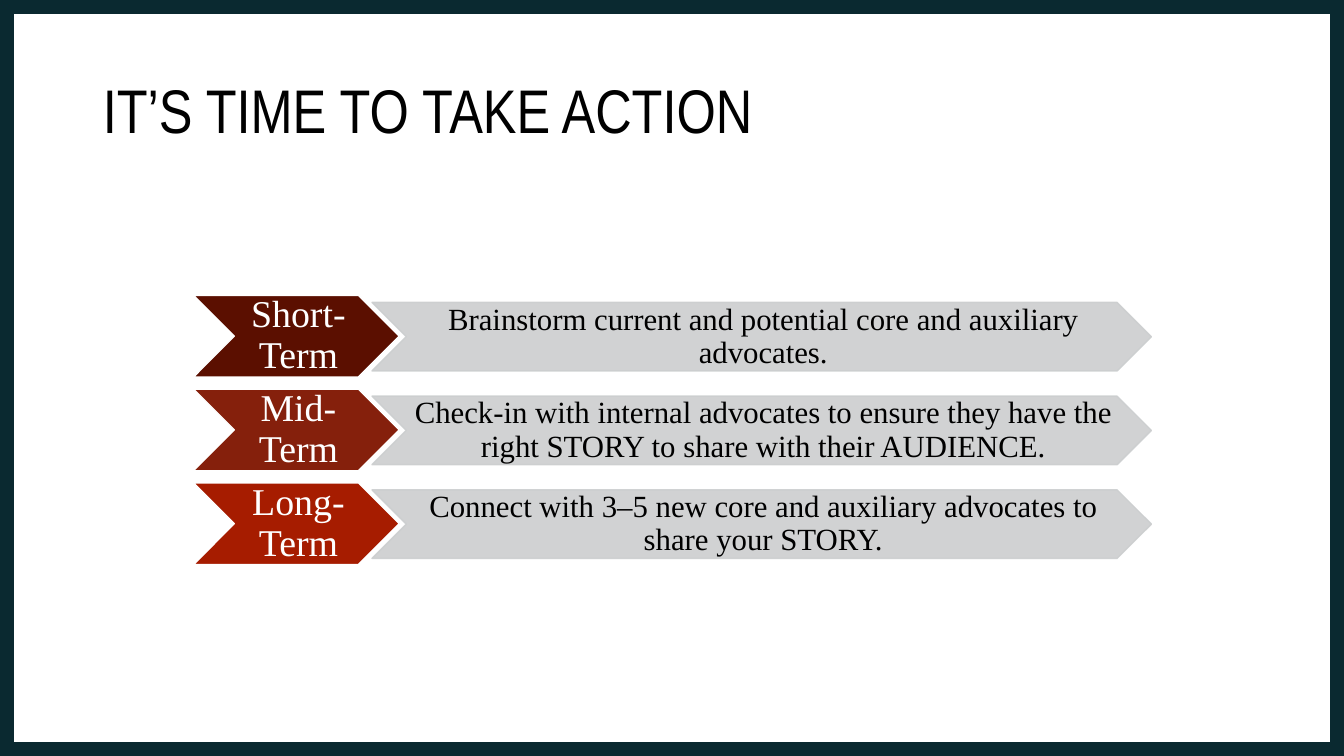
from lxml import etree
from pptx import Presentation
from pptx.dml.color import RGBColor
from pptx.enum.shapes import MSO_SHAPE
from pptx.enum.text import MSO_ANCHOR, MSO_AUTO_SIZE, PP_ALIGN
from pptx.oxml.ns import qn
from pptx.util import Inches, Pt

RECT, CHEVRON = MSO_SHAPE.RECTANGLE, MSO_SHAPE.CHEVRON
MIDDLE, NO_FIT = MSO_ANCHOR.MIDDLE, MSO_AUTO_SIZE.NONE
LEFT, CENTER = PP_ALIGN.LEFT, PP_ALIGN.CENTER

COLORS = {
    "frame": "0A2930",
    "white": "FFFFFF",
    "black": "000000",
    "grey": "CCCECF",
    "short": "5B0F00",
    "mid": "85200C",
    "long": "A61C00",
}
STEPS = [
    ("short", "Short-Term",
     "Brainstorm current and potential core and auxiliary advocates."),
    ("mid", "Mid-Term",
     "Check-in with internal advocates to ensure they have the right STORY "
     "to share with their AUDIENCE."),
    ("long", "Long-Term",
     "Connect with 3–5 new core and auxiliary advocates to share your STORY."),
]
TOP, PITCH = 2.93, 0.93


def rgb(name):
    return RGBColor.from_string(COLORS[name])


def write(sp, text, size, font="Times New Roman", color="black",
          align=CENTER, insets=None):
    tf = sp.text_frame
    tf.word_wrap = True
    tf.auto_size = NO_FIT
    tf.vertical_anchor = MIDDLE
    if insets:
        (tf.margin_left, tf.margin_top,
         tf.margin_right, tf.margin_bottom) = [Inches(v) for v in insets]
    p = tf.paragraphs[0]
    p.alignment = align
    p.line_spacing = 0.9
    r = p.add_run()
    r.text = text
    r.font.size = Pt(size)
    r.font.name = font
    r.font.color.rgb = rgb(color)


class Deck:
    """Holds the presentation, its style and the current slide."""

    def __init__(self):
        self.prs = Presentation()
        self.prs.slide_width = Inches(13.33)
        self.prs.slide_height = Inches(7.5)
        self.s = self.prs.slides.add_slide(self.prs.slide_layouts[5])
        self.s.background.fill.solid()
        self.s.background.fill.fore_color.rgb = rgb("white")

    def shape(self, kind, box, line, width, fill=None, alpha=None):
        sp = self.s.shapes.add_shape(kind, *[Inches(v) for v in box])
        sp.shadow.inherit = False
        sp.line.color.rgb = rgb(line)
        sp.line.width = Pt(width)
        if fill:
            sp.fill.solid()
            sp.fill.fore_color.rgb = rgb(fill)
        else:
            sp.fill.background()
        if alpha:
            for clr in sp._element.spPr.iter(qn("a:srgbClr")):
                etree.SubElement(clr, qn("a:alpha"), val=str(alpha * 1000))
        return sp

    def title(self, text):
        sp = self.s.shapes.title
        sp.left, sp.top = Inches(0.92), Inches(0.4)
        sp.width, sp.height = Inches(11.5), Inches(1.45)
        write(sp, text, 44, font="Arial Narrow", align=LEFT)

    def step(self, y, color, label, action):
        sp = self.shape(CHEVRON, (1.92, y, 2.04, 0.81), "white", 1, color)
        write(sp, label, 27, color="white", insets=(0.04, 0.02, 0, 0.02))
        sp = self.shape(CHEVRON, (3.69, y + 0.07, 7.73, 0.68), "grey", 1,
                        "grey", alpha=90)
        write(sp, action, 22, insets=(0.03, 0.02, 0, 0.02))


def main():
    deck = Deck()
    deck.shape(RECT, (0, 0, 13.33, 7.5), "frame", 20.25)
    deck.title("IT’S TIME TO TAKE ACTION")
    for i, (color, label, action) in enumerate(STEPS):
        deck.step(TOP + i * PITCH, color, label, action)
    deck.prs.save("out.pptx")


if __name__ == "__main__":
    main()
